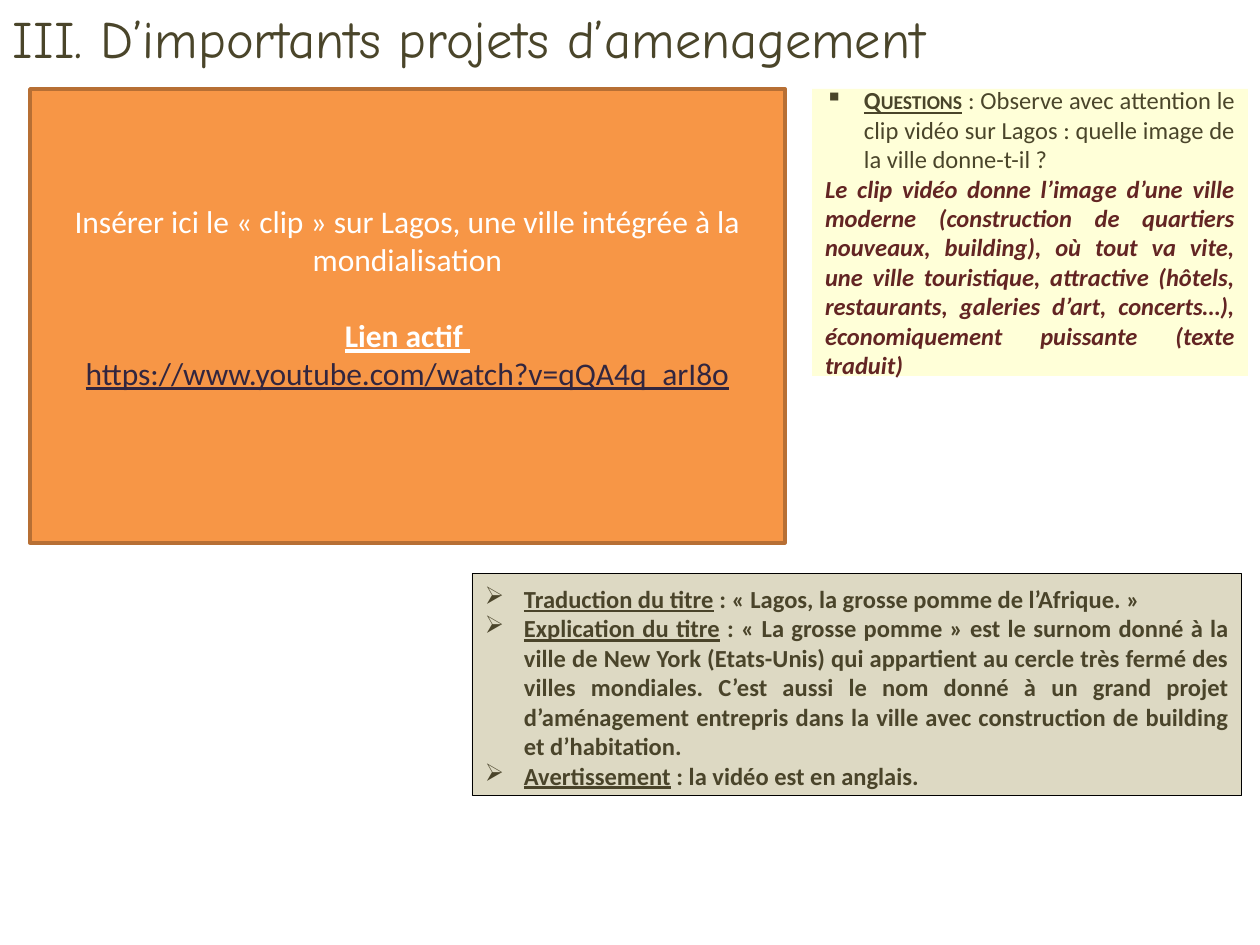
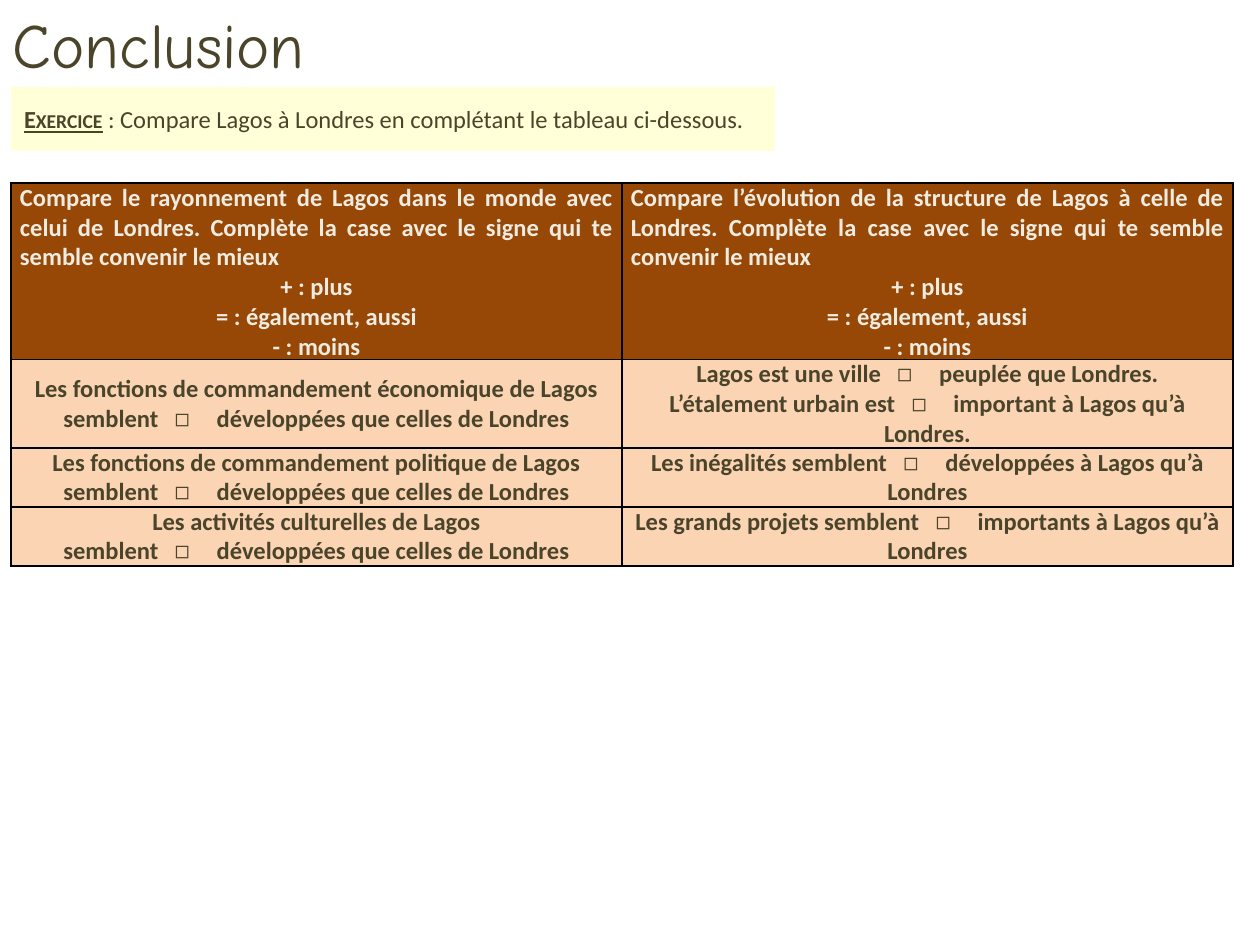
from lxml import etree
from pptx import Presentation
from pptx.dml.color import RGBColor
from pptx.enum.shapes import MSO_SHAPE
from pptx.enum.text import MSO_ANCHOR, PP_ALIGN
from pptx.oxml.ns import qn
from pptx.util import Emu, Pt

RECTANGLE = MSO_SHAPE.RECTANGLE
MIDDLE, TOP = MSO_ANCHOR.MIDDLE, MSO_ANCHOR.TOP
LEFT, CENTER, JUSTIFY = PP_ALIGN.LEFT, PP_ALIGN.CENTER, PP_ALIGN.JUSTIFY

EMU_PER_PX = 914400 / 126
SLIDE_WIDTH, SLIDE_HEIGHT = 1260, 945
INSETS = (13, 6, 13, 6)
BULLET_INDENT = 39
ANSWER_BOX = "◻"
TITLE_FONT, BODY_FONT = "Comic Neue", "Calibri"
COLORS = {
    "title": "4A452A", "body": "4A442A", "answer": "632523", "white": "FFFFFF",
    "link": "32263F", "task": "FFFF99", "note": "DDD9C3", "black": "000000",
    "clip": "F79646", "clip_line": "B76F34", "header": "984806",
    "header_text": "EEECE1", "cell": "FBD4B4",
}

SIGNS = ["+ : plus", "= : également, aussi", "- : moins"]
HEADERS = [
    "Compare le rayonnement de Lagos dans le monde avec celui de Londres. "
    "Complète la case avec le signe qui te semble convenir le mieux",
    "Compare l’évolution de la structure de Lagos à celle de Londres. "
    "Complète la case avec le signe qui te semble convenir le mieux",
]
COMPARISONS = [
    [["Les fonctions de commandement économique de Lagos semblent ◻ développées que celles de Londres"],
     ["Lagos est une ville ◻ peuplée que Londres.",
      "L’étalement urbain est ◻ important à Lagos qu’à Londres."]],
    [["Les fonctions de commandement politique de Lagos semblent ◻ développées que celles de Londres"],
     ["Les inégalités semblent ◻ développées à Lagos qu’à Londres"]],
    [["Les activités culturelles de Lagos",
      "semblent ◻ développées que celles de Londres"],
     ["Les grands projets semblent ◻ importants à Lagos qu’à Londres"]],
]
NOTES = [
    ("Traduction du titre", "\u00a0: «\u00a0Lagos, la grosse pomme de l’Afrique.\u00a0»".replace("\u00a0", " ")),
    ("Explication du titre",
     " : « La grosse pomme » est le surnom donné à la ville de New York (Etats-Unis) "
     "qui appartient au cercle très fermé des villes mondiales. C’est aussi le nom donné "
     "à un grand projet d’aménagement entrepris dans la ville avec construction de "
     "building et d’habitation."),
    ("Avertissement", " : la vidéo est en anglais."),
]


def px(length):
    """Turn pixels into EMU."""
    return Emu(round(length * EMU_PER_PX))


def rgb(name):
    """Look up a named colour."""
    return RGBColor.from_string(COLORS[name])


def add_bullet(paragraph, character):
    """Give a paragraph a hanging bullet."""
    properties = paragraph._p.get_or_add_pPr()
    properties.set("marL", str(px(BULLET_INDENT)))
    properties.set("indent", str(-px(BULLET_INDENT)))
    etree.SubElement(properties, qn("a:buChar"), char=character)


def add_paragraph(frame, text, color, size=14, align=JUSTIFY, font=BODY_FONT,
                  bold=None, italic=None, underline=None, bullet=None):
    """Fill the empty first paragraph or append a new one."""
    paragraph = frame.paragraphs[0]
    if paragraph.runs:
        paragraph = frame.add_paragraph()
    paragraph.alignment = align
    if bullet:
        add_bullet(paragraph, bullet)
    style = paragraph.font
    style.name, style.size, style.color.rgb = font, Pt(size), rgb(color)
    style.bold, style.italic, style.underline = bold, italic, underline
    if text:
        paragraph.add_run().text = text
    return paragraph


def add_labelled(frame, label, text, color, small_caps=False, bold=None, bullet=None):
    """Add a paragraph that opens with an underlined bold label."""
    paragraph = add_paragraph(frame, "", color, bold=bold, bullet=bullet)
    run = paragraph.add_run()
    run.text = label
    run.font.bold = run.font.underline = True
    if small_caps:
        run.font._element.set("cap", "small")
    paragraph.add_run().text = text


def setup_frame(frame, anchor, insets=INSETS):
    """Set wrapping, anchor and margins of a text frame."""
    frame.word_wrap = True
    frame.vertical_anchor = anchor
    (frame.margin_left, frame.margin_top,
     frame.margin_right, frame.margin_bottom) = map(px, insets)
    return frame


def add_panel(slide, box, fill, line=None, line_width=0, alpha=None, insets=INSETS):
    """Draw a filled rectangle and return its text frame."""
    shape = slide.shapes.add_shape(RECTANGLE, *map(px, box))
    shape.shadow.inherit = False
    shape.fill.solid()
    shape.fill.fore_color.rgb = rgb(fill)
    if alpha:
        color = shape._element.spPr.find(qn("a:solidFill"))[0]
        etree.SubElement(color, qn("a:alpha"), val=str(alpha * 1000))
    if line:
        shape.line.color.rgb = rgb(line)
        shape.line.width = Pt(line_width)
    else:
        shape.line.fill.background()
    return setup_frame(shape.text_frame, MIDDLE, insets)


def add_title(slide, text, size, height):
    """Write the slide title across the top."""
    box = slide.shapes.add_textbox(0, 0, px(SLIDE_WIDTH), px(height))
    frame = setup_frame(box.text_frame, TOP)
    add_paragraph(frame, text, "title", size, LEFT, TITLE_FONT)


def add_task(slide, box, label, text, bullet=None):
    """Draw a pale yellow task panel."""
    frame = add_panel(slide, box, "task", alpha=38)
    add_labelled(frame, label, text, "title", small_caps=True, bullet=bullet)
    return frame


def add_notes(slide, box):
    """Draw the panel of notes about the video."""
    frame = add_panel(slide, box, "note", "black", 0.5, insets=(13, 5, 13, 0))
    for label, text in NOTES:
        add_labelled(frame, label, text, "body", bold=True, bullet="➢")


def add_clip(slide, box):
    """Draw the orange panel that stands for the video."""
    frame = add_panel(slide, box, "clip", "clip_line", 2, insets=(13, 6, 13, 44))
    add_paragraph(frame, "Insérer ici le « clip » sur Lagos, une ville intégrée à la mondialisation",
                  "white", 18, CENTER)
    heading = add_paragraph(frame, "Lien actif ", "white", 18, CENTER, bold=True, underline=True)
    heading.space_before = Pt(22)
    add_paragraph(frame, "https://www.youtube.com/watch?v=qQA4q_arI8o",
                  "link", 18, CENTER, underline=True)


def style_cell(cell, fill, anchor):
    """Give a cell black borders, a fill and tight margins."""
    properties = cell._tc.get_or_add_tcPr()
    for side in ("a:lnL", "a:lnR", "a:lnT", "a:lnB"):
        border = etree.SubElement(properties, qn(side), w=str(Pt(1)))
        solid = etree.SubElement(border, qn("a:solidFill"))
        etree.SubElement(solid, qn("a:srgbClr"), val=COLORS["black"])
    cell.fill.solid()
    cell.fill.fore_color.rgb = rgb(fill)
    cell.vertical_anchor = anchor
    cell.margin_left = cell.margin_right = px(9)
    cell.margin_top = cell.margin_bottom = 0


def add_gap_sentence(frame, sentence):
    """Add a sentence with a widely spaced box to fill in."""
    before, box, after = sentence.partition(f" {ANSWER_BOX} ")
    paragraph = add_paragraph(frame, before, "body", align=CENTER, bold=True)
    if box:
        run = paragraph.add_run()
        run.text = box
        run.font._element.set("spc", "600")
        paragraph.add_run().text = after


def add_comparison(slide, box, row_heights):
    """Build the table comparing Lagos with London."""
    table = slide.shapes.add_table(len(row_heights), len(HEADERS), *map(px, box)).table
    table.first_row = table.horz_banding = False
    for row, height in zip(table.rows, row_heights):
        row.height = px(height)
    for column, header in enumerate(HEADERS):
        cell = table.cell(0, column)
        style_cell(cell, "header", TOP)
        add_paragraph(cell.text_frame, header, "header_text", bold=True)
        for sign in SIGNS:
            add_paragraph(cell.text_frame, sign, "header_text", align=CENTER, bold=True)
    for row, pair in enumerate(COMPARISONS, start=1):
        for column, sentences in enumerate(pair):
            cell = table.cell(row, column)
            style_cell(cell, "cell", MIDDLE)
            for sentence in sentences:
                add_gap_sentence(cell.text_frame, sentence)


def build_projects(slide):
    """Build the slide on development projects."""
    add_title(slide, "III. D’importants projets d’amenagement", 30, 77)
    frame = add_task(slide, (812, 89, 436, 287), "Questions",
                     " : Observe avec attention le clip vidéo sur Lagos : "
                     "quelle image de la ville donne-t-il ?", bullet="▪")
    add_paragraph(frame, "Le clip vidéo donne l’image d’une ville moderne (construction de "
                  "quartiers nouveaux, building), où tout va vite, une ville touristique, "
                  "attractive (hôtels, restaurants, galeries d’art, concerts…), "
                  "économiquement puissante (texte traduit)",
                  "answer", bold=True, italic=True)
    add_notes(slide, (472, 573, 770, 223))
    add_clip(slide, (30, 89, 755, 454))


def build_conclusion(slide):
    """Build the concluding exercise slide."""
    add_title(slide, "Conclusion", 36, 89)
    add_task(slide, (11, 87, 764, 64), "Exercice",
             " : Compare Lagos à Londres en complétant le tableau ci-dessous.")
    add_comparison(slide, (11, 183, 1222, 382), (176, 88, 59, 59))


def main():
    """Build and save the presentation."""
    presentation = Presentation()
    presentation.slide_width, presentation.slide_height = px(SLIDE_WIDTH), px(SLIDE_HEIGHT)
    blank = presentation.slide_layouts[6]
    for build in (build_projects, build_conclusion):
        build(presentation.slides.add_slide(blank))
    presentation.save("out.pptx")


if __name__ == "__main__":
    main()
